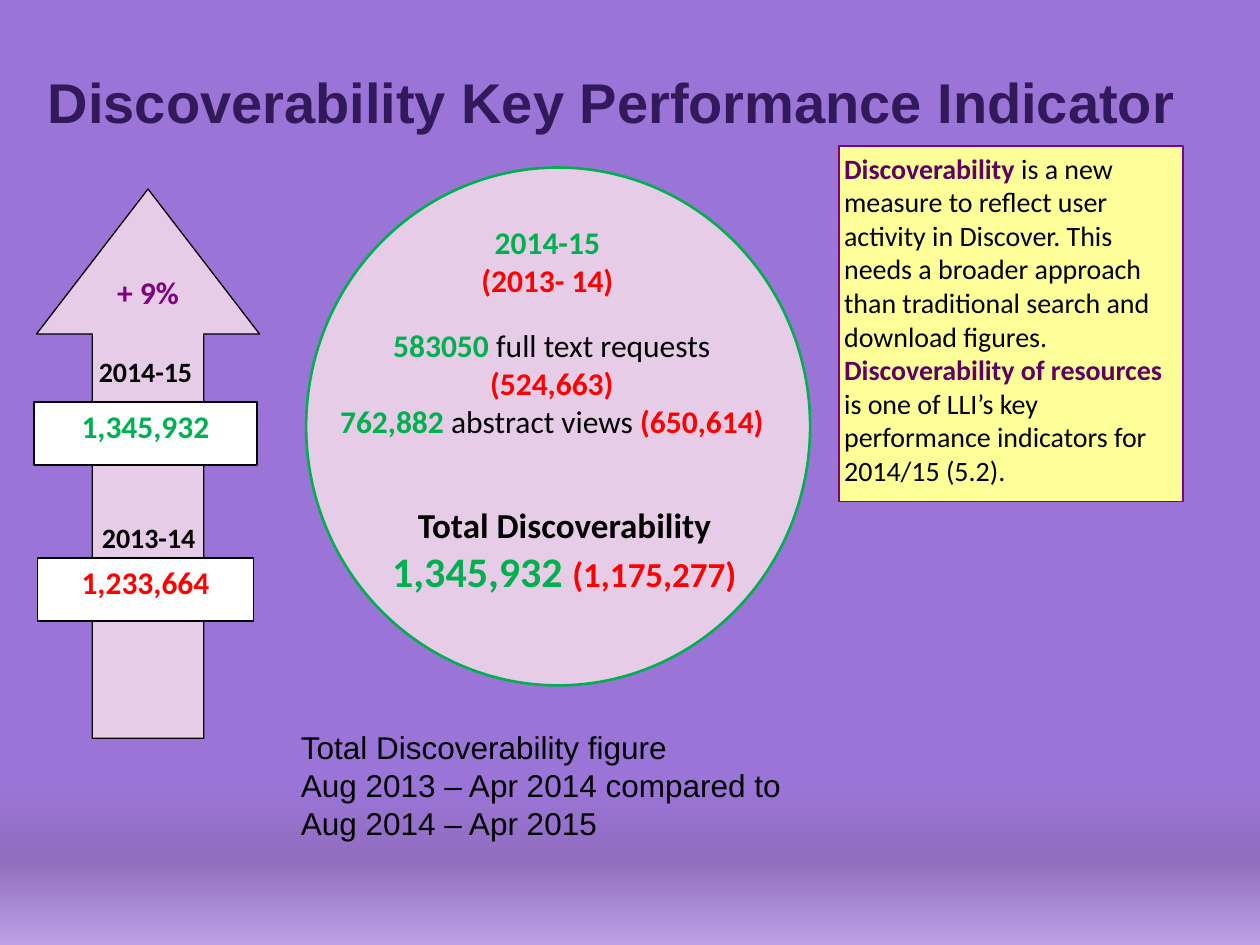
from copy import deepcopy

from pptx import Presentation
from pptx.dml.color import RGBColor
from pptx.enum.shapes import MSO_SHAPE
from pptx.enum.text import MSO_ANCHOR, MSO_AUTO_SIZE, PP_ALIGN
from pptx.oxml.ns import qn
from pptx.util import Inches, Pt

RECTANGLE, ELLIPSE, ARROW = MSO_SHAPE.RECTANGLE, MSO_SHAPE.OVAL, MSO_SHAPE.DOWN_ARROW
LEFT, CENTER = PP_ALIGN.LEFT, PP_ALIGN.CENTER
TOP, MIDDLE = MSO_ANCHOR.TOP, MSO_ANCHOR.MIDDLE
NO_AUTOFIT = MSO_AUTO_SIZE.NONE

BLACK = RGBColor(0x00, 0x00, 0x00)
WHITE = RGBColor(0xFF, 0xFF, 0xFF)
RED = RGBColor(0xFF, 0x00, 0x00)
GREEN = RGBColor(0x00, 0xB0, 0x50)
PURPLE = RGBColor(0x80, 0x00, 0x80)
DARK_PURPLE = RGBColor(0x60, 0x00, 0x60)
TITLE_PURPLE = RGBColor(0x32, 0x19, 0x59)
PINK = RGBColor(0xE6, 0xCC, 0xE6)
YELLOW = RGBColor(0xFF, 0xFF, 0x99)
VIOLET = RGBColor(0x9B, 0x74, 0xD8)
BACKGROUND_STOPS = [
    (0.13, VIOLET),
    (0.83, VIOLET),
    (0.91, RGBColor(0x91, 0x6D, 0xBE)),
    (1.0, RGBColor(0xBC, 0xA2, 0xE5)),
]
BREAK = None  # stands for a line break among the runs of a paragraph


class SlideBuilder:
    """Holds the style and the current slide."""

    heading_font = "Arial"
    body_font = "Calibri"
    margin = 0.04

    def __init__(self, presentation):
        self.slide = presentation.slides.add_slide(presentation.slide_layouts[5])

    def background(self, stops):
        fill = self.slide.background.fill
        fill.gradient()
        fill.gradient_angle = 270
        stop_list = next(self.slide.element.iter(qn("a:gsLst")))
        while len(stop_list) < len(stops):
            stop_list.append(deepcopy(stop_list[0]))
        for stop, (position, color) in zip(fill.gradient_stops, stops):
            stop.position = position
            stop.color.rgb = color

    def add_runs(self, shape, paragraphs, align=CENTER, anchor=TOP, margin=margin,
                 font=body_font, space_after=0):
        """Each paragraph is a list of runs: (text, size, color, bold)."""
        frame = shape.text_frame
        frame.auto_size = NO_AUTOFIT
        frame.word_wrap = True
        frame.vertical_anchor = anchor
        if margin is not None:
            frame.margin_left = frame.margin_right = Inches(margin)
            frame.margin_top = frame.margin_bottom = Inches(margin)
        for index, runs in enumerate(paragraphs):
            paragraph = frame.add_paragraph() if index else frame.paragraphs[0]
            paragraph.alignment = align
            paragraph.space_after = Pt(space_after)
            for item in runs:
                if item is BREAK:
                    paragraph.add_line_break()
                    continue
                text, size, color, bold = item
                run = paragraph.add_run()
                run.text = text
                run.font.name = font
                run.font.size = Pt(size)
                run.font.bold = bold
                run.font.color.rgb = color

    def title(self, box, text):
        shape = self.slide.shapes.title
        shape.left, shape.top, shape.width, shape.height = map(Inches, box)
        self.add_runs(shape, [[(text, 32, TITLE_PURPLE, True)]], align=LEFT,
                      anchor=MIDDLE, margin=None, font=self.heading_font)

    def shape(self, kind, box, fill, line, width=0.75, paragraphs=(), **style):
        shape = self.slide.shapes.add_shape(kind, *map(Inches, box))
        shape.shadow.inherit = False
        shape.fill.solid()
        shape.fill.fore_color.rgb = fill
        shape.line.color.rgb = line
        shape.line.width = Pt(width)
        self.add_runs(shape, paragraphs, **style)
        return shape

    def text(self, box, paragraphs, **style):
        shape = self.slide.shapes.add_textbox(*map(Inches, box))
        self.add_runs(shape, paragraphs, **style)


def main():
    presentation = Presentation()
    presentation.slide_width, presentation.slide_height = Inches(10), Inches(7.5)
    builder = SlideBuilder(presentation)
    builder.background(BACKGROUND_STOPS)
    builder.title((0.28, 0.3, 9.35, 1.01), "Discoverability Key Performance Indicator")

    # Explanation panel
    builder.shape(RECTANGLE, (6.66, 1.16, 2.73, 2.82), YELLOW, PURPLE, align=LEFT, paragraphs=[
        [("Discoverability ", 16, DARK_PURPLE, True),
         ("is a new measure to reflect user activity in Discover. This needs a broader "
          "approach than traditional search and download figures.", 16, BLACK, False)],
        [("Discoverability of resources ", 16, DARK_PURPLE, True),
         ("is one of LLI’s key performance indicators for 2014/15 (5.2).", 16, BLACK, False)],
    ])

    # Growth arrow with the two yearly totals
    arrow = builder.shape(ARROW, (0.29, 1.5, 1.77, 4.36), PINK, BLACK)
    arrow.rotation = 180
    arrow.adjustments[0], arrow.adjustments[1] = 0.5, 0.65
    for box, total, color in [
        ((0.27, 3.19, 1.77, 0.5), "1,345,932", GREEN),
        ((0.3, 4.43, 1.71, 0.5), "1,233,664", RED),
    ]:
        builder.shape(RECTANGLE, box, WHITE, BLACK, paragraphs=[[(total, 18, color, True)]])
    for box, label, size, color in [
        ((0.74, 2.77, 0.83, 0.33), "2014-15", 16, BLACK),
        ((0.74, 4.09, 0.88, 0.33), "2013-14", 16, BLACK),
        ((0.75, 2.13, 0.85, 0.42), "+ 9%", 18, PURPLE),
    ]:
        builder.text(box, [[(label, size, color, True)]])

    # Comparison note
    builder.text((2.29, 5.73, 4.37, 1.01), [
        [("Total Discoverability figure", 18, BLACK, False)],
        [("Aug 2013 – Apr 2014 compared to Aug 2014 – Apr 2015", 18, BLACK, False)],
    ], align=LEFT, margin=None, font=builder.heading_font)

    # Circle with the breakdown
    builder.shape(ELLIPSE, (2.43, 1.33, 4, 4.11), PINK, GREEN, width=1.5)
    builder.text((3.68, 1.73, 1.33, 0.82), [
        [("2014-15", 18, GREEN, True)],
        [("(2013- 14)", 18, RED, True)],
    ])
    builder.text((2.59, 2.55, 3.58, 1.27), [[
        ("583050 ", 18, GREEN, True),
        ("full text requests ", 18, BLACK, False),
        ("(524,663)", 18, RED, True),
        BREAK,
        ("762,882 ", 18, GREEN, True),
        ("abstract views ", 18, BLACK, False),
        ("(650,614)", 18, RED, True),
    ]], space_after=14)
    builder.text((2.73, 3.96, 3.5, 0.96), [
        [("Total Discoverability", 20, BLACK, True)],
        [("1,345,932 ", 24, GREEN, True), ("(1,175,277)", 20, RED, True)],
    ])

    presentation.save("out.pptx")


if __name__ == "__main__":
    main()
